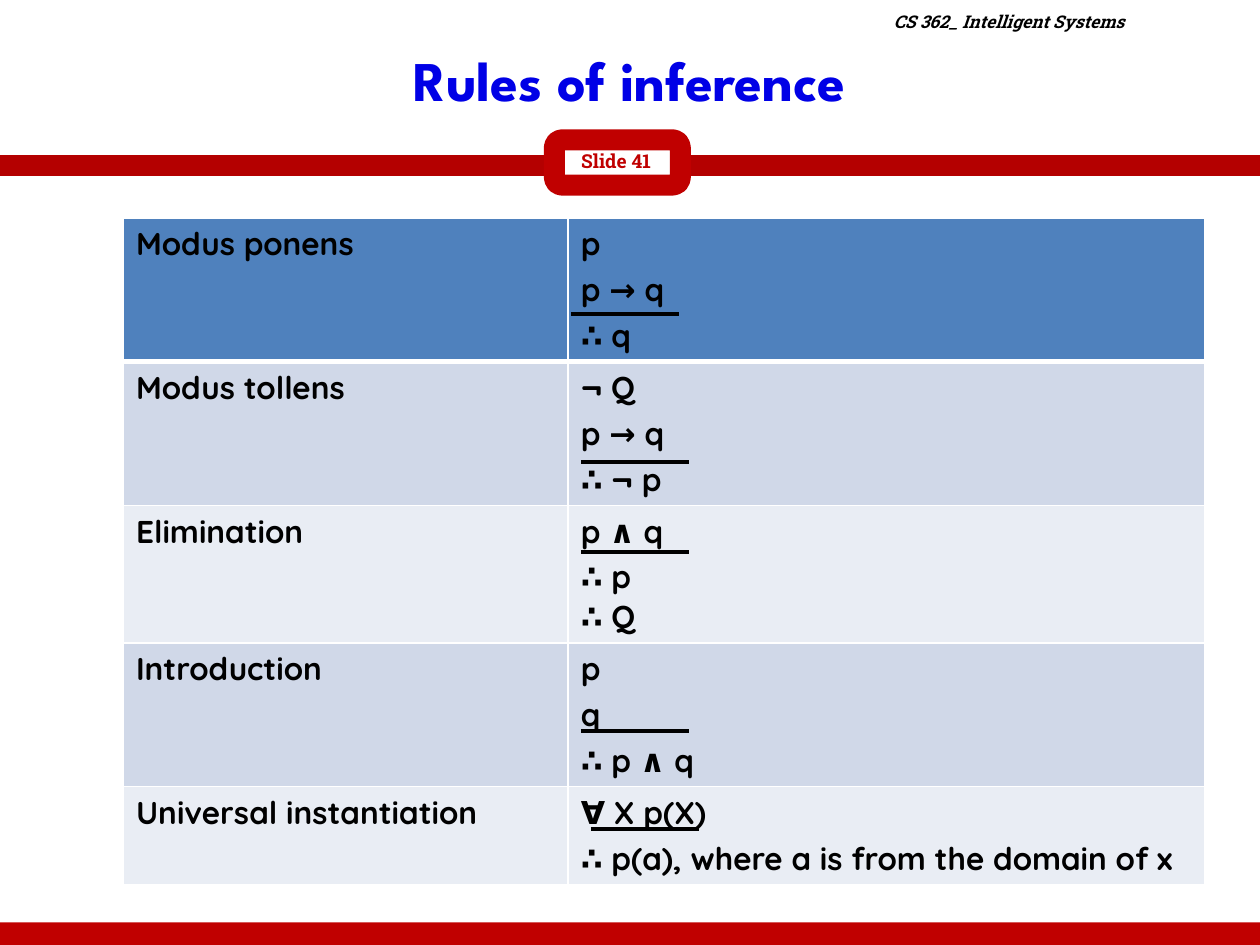
from lxml import etree
from pptx import Presentation
from pptx.dml.color import RGBColor
from pptx.enum.shapes import MSO_CONNECTOR, MSO_SHAPE
from pptx.enum.text import MSO_ANCHOR, PP_ALIGN
from pptx.oxml.ns import qn
from pptx.util import Inches, Pt

STRAIGHT = MSO_CONNECTOR.STRAIGHT
RECTANGLE = MSO_SHAPE.RECTANGLE
ROUNDED = MSO_SHAPE.ROUNDED_RECTANGLE
MIDDLE = MSO_ANCHOR.MIDDLE
LEFT, CENTER, RIGHT = PP_ALIGN.LEFT, PP_ALIGN.CENTER, PP_ALIGN.RIGHT

COLORS = {
    "white": "FFFFFF", "black": "000000", "title": "0000E6",
    "band": "B40000", "red": "C00000",
    "header": "4F81BD", "odd": "D0D8E8", "even": "E9EDF4",
}
TITLE_FONT, TABLE_FONT, LABEL_FONT = "League Spartan", "Quicksand", "Roboto Slab"

RULES = [
    ("Modus ponens", ["p", "p → q", "∴ q"]),
    ("Modus tollens", ["¬ Q", "p → q", "∴ ¬ p"]),
    ("Elimination", ["p ∧ q", "∴ p", "∴ Q"]),
    ("Introduction", ["p", "q", "∴ p ∧ q"]),
    ("Universal instantiation", ["∀ X p(X)", "∴ p(a), where a is from the domain of x"]),
]
TIGHT_LINE = "∴ Q"
COLUMN_WIDTHS = [3.53, 5.05]
ROW_HEIGHTS = [1.14, 1.14, 1.09, 1.14, 0.77]
INFERENCE_BARS = [(4.53, 2.49), (4.61, 3.67), (4.61, 4.38), (4.61, 5.8), (4.69, 6.58)]
BAR_LENGTH = 0.86


def rgb(name):
    return RGBColor.from_string(COLORS[name])


def write(frame, lines, font, size, color="black", italic=False, align=LEFT, gap=0):
    """Fill a text frame with bold lines, gap points apart."""
    frame.word_wrap = True
    for index, line in enumerate(lines):
        paragraph = frame.paragraphs[0] if index == 0 else frame.add_paragraph()
        paragraph.alignment = align
        paragraph.space_before = Pt(gap if index and line != TIGHT_LINE else 0)
        run = paragraph.add_run()
        run.text = line
        run.font.name = font
        run.font.size = Pt(size)
        run.font.bold = True
        run.font.italic = italic
        run.font.color.rgb = rgb(color)


def set_borders(cell, **widths):
    """Draw white cell borders; widths are points by side letter."""
    properties = cell._tc.get_or_add_tcPr()
    for side in "LRTB":
        line = etree.SubElement(properties, qn(f"a:ln{side}"), w=str(Pt(widths.get(side, 1))))
        fill = etree.SubElement(line, qn("a:solidFill"))
        etree.SubElement(fill, qn("a:srgbClr"), val=COLORS["white"])


class SlideBuilder:
    def __init__(self, slide):
        self.slide = slide

    def title(self, text, left, top, width, height):
        shape = self.slide.shapes.title
        shape.left, shape.top = Inches(left), Inches(top)
        shape.width, shape.height = Inches(width), Inches(height)
        shape.text_frame.vertical_anchor = MIDDLE
        write(shape.text_frame, [text], TITLE_FONT, 32, color="title", align=CENTER)

    def line(self, start, end, color, width):
        connector = self.slide.shapes.add_connector(
            STRAIGHT, *(Inches(value) for value in (*start, *end)))
        connector.line.color.rgb = rgb(color)
        connector.line.width = Pt(width)
        etree.SubElement(connector._element.spPr, qn("a:effectLst"))

    def box(self, kind, left, top, width, height, fill, outline=None):
        shape = self.slide.shapes.add_shape(
            kind, Inches(left), Inches(top), Inches(width), Inches(height))
        shape.shadow.inherit = False
        shape.fill.solid()
        shape.fill.fore_color.rgb = rgb(fill)
        if outline:
            shape.line.color.rgb = rgb(outline)
            shape.line.width = Pt(12)
        else:
            shape.line.fill.background()

    def label(self, text, left, top, width, height, **text_format):
        shape = self.slide.shapes.add_textbox(
            Inches(left), Inches(top), Inches(width), Inches(height))
        shape.text_frame.vertical_anchor = MIDDLE
        write(shape.text_frame, [text], LABEL_FONT, **text_format)

    def rules_table(self, left, top):
        table = self.slide.shapes.add_table(
            len(RULES), len(COLUMN_WIDTHS), Inches(left), Inches(top),
            Inches(sum(COLUMN_WIDTHS)), Inches(sum(ROW_HEIGHTS))).table
        for column, width in zip(table.columns, COLUMN_WIDTHS):
            column.width = Inches(width)
        for index, (name, steps) in enumerate(RULES):
            table.rows[index].height = Inches(ROW_HEIGHTS[index])
            fill = "header" if index == 0 else ("even", "odd")[index % 2]
            for cell, lines in zip(table.rows[index].cells, ([name], steps)):
                set_borders(cell, B=3 if index == 0 else 1, T=3 if index == 1 else 1)
                cell.fill.solid()
                cell.fill.fore_color.rgb = rgb(fill)
                write(cell.text_frame, lines, TABLE_FONT, 18, gap=3.6)


def main():
    presentation = Presentation()
    presentation.slide_width, presentation.slide_height = Inches(10), Inches(7.5)
    builder = SlideBuilder(presentation.slides.add_slide(presentation.slide_layouts[5]))

    builder.line((0, 1.31), (10, 1.31), "band", 12)
    builder.box(RECTANGLE, -0.01, 7.32, 10.04, 0.21, "red")
    builder.box(ROUNDED, 4.4, 1.11, 1, 0.36, "white", outline="red")
    builder.title("Rules of inference", 0.98, 0.21, 8.03, 0.84)
    builder.rules_table(0.98, 1.73)
    builder.label("CS 362_ Intelligent Systems", 6.34, -0.03, 2.68, 0.4,
                  size=10, italic=True, align=RIGHT)
    builder.label("Slide 41", 4.42, 1.08, 0.94, 0.39, size=11, color="red", align=CENTER)
    for left, top in INFERENCE_BARS:
        builder.line((left, top), (left + BAR_LENGTH, top), "black", 2.25)

    presentation.save("out.pptx")


if __name__ == "__main__":
    main()
